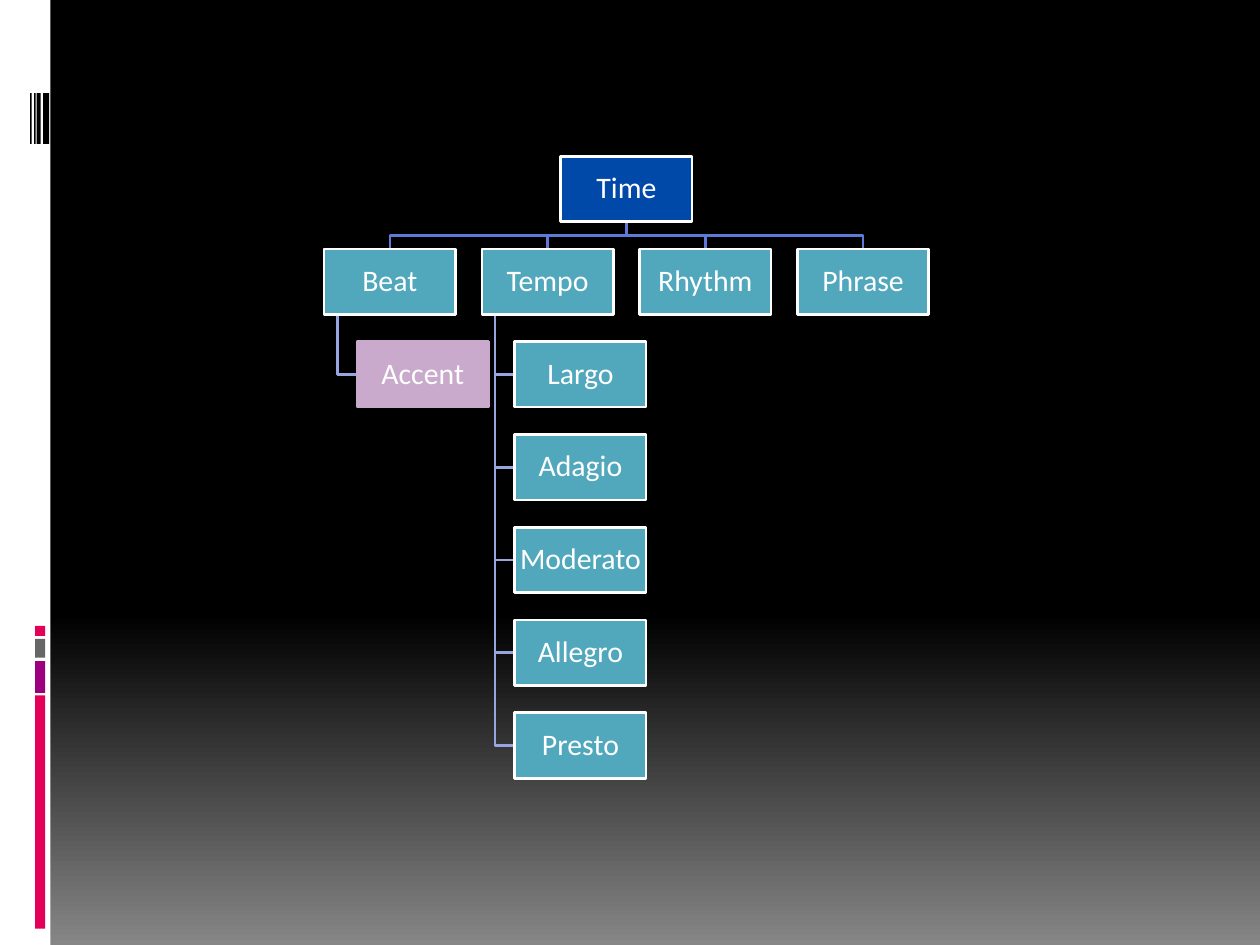
import pptx
import pptx.dml.color
import pptx.enum.shapes
import pptx.enum.text
import pptx.util

Cm = pptx.util.Cm
Pt = pptx.util.Pt

COLORS = {
    "black": "000000",
    "white": "FFFFFF",
    "fade": "868686",
    "pink": "E40059",
    "purple": "9C007F",
    "gray": "666666",
    "root": "0049A9",
    "topic": "51A8BD",
    "accent": "C9AACC",
    "main_link": "5E7AD8",
    "sub_link": "97A5E1",
}

# Tree grid, in centimetres
BOX_W, BOX_H = 2.65, 1.32
COLUMN_STEP, ROW_STEP = 3.18, 1.87
TREE_CENTER, TREE_TOP = 12.63, 3.15
INDENT = BOX_W / 4
TRUNK = BOX_W / 10

TOPICS = {
    "Beat": ["Accent"],
    "Tempo": ["Largo", "Adagio", "Moderato", "Allegro", "Presto"],
    "Rhythm": [],
    "Phrase": [],
}


def rgb(name):
    return pptx.dml.color.RGBColor.from_string(COLORS[name])


class TreeSlide:
    font = "Calibri"
    size = Pt(17)
    line_width = Pt(1.5)

    def __init__(self, slide):
        self.slide = slide

    def background(self, start, end, hold):
        fill = self.slide.background.fill
        fill.gradient()
        fill.gradient_angle = 270
        for stop, color, position in zip(fill.gradient_stops, (start, end), (hold, 1)):
            stop.color.rgb = rgb(color)
            stop.position = position

    def block(self, left, top, width, height, fill, outline=None):
        block = self.slide.shapes.add_shape(
            pptx.enum.shapes.MSO_SHAPE.RECTANGLE,
            Cm(left), Cm(top), Cm(width), Cm(height))
        block.shadow.inherit = False
        block.fill.solid()
        block.fill.fore_color.rgb = rgb(fill)
        if outline:
            block.line.color.rgb = rgb(outline)
            block.line.width = self.line_width
        else:
            block.line.fill.background()
        return block

    def node(self, label, left, top, fill, outline="white"):
        frame = self.block(left, top, BOX_W, BOX_H, fill, outline).text_frame
        frame.text = label
        frame.word_wrap = True
        frame.vertical_anchor = pptx.enum.text.MSO_ANCHOR.MIDDLE
        frame.margin_left = frame.margin_right = Cm(0.03)
        frame.margin_top = frame.margin_bottom = Cm(0.03)
        paragraph = frame.paragraphs[0]
        paragraph.alignment = pptx.enum.text.PP_ALIGN.CENTER
        paragraph.line_spacing = 0.9
        font = paragraph.runs[0].font
        font.name, font.size = self.font, self.size
        font.color.rgb = rgb("white")

    def link(self, points, color):
        start, *rest = [(Cm(x), Cm(y)) for x, y in points]
        builder = self.slide.shapes.build_freeform(*start)
        builder.add_line_segments(rest, close=False)
        link = builder.convert_to_shape()
        link.shadow.inherit = False
        link.fill.background()
        link.line.color.rgb = rgb(color)
        link.line.width = self.line_width


def row_top(row):
    return TREE_TOP + row * ROW_STEP


def column_center(column):
    return TREE_CENTER + (column - (len(TOPICS) - 1) / 2) * COLUMN_STEP


def main():
    deck = pptx.Presentation()
    deck.slide_width, deck.slide_height = Cm(25.4), Cm(19.05)
    page = TreeSlide(deck.slides.add_slide(deck.slide_layouts[6]))
    page.background("black", "fade", 0.65)

    # Side strip with barcode and coloured bars
    page.block(0, 0, 1.02, 19.05, "white")
    for left, width in ((0.87, 0.12), (0.74, 0.08), (0.69, 0.03), (0.61, 0.03)):
        page.block(left, 1.88, width, 1.02, "black")
    for top, height, color in ((14.02, 4.7, "pink"), (13.33, 0.64, "purple"),
                               (12.88, 0.38, "gray"), (12.62, 0.2, "pink")):
        page.block(0.71, top, 0.2, height, color)

    # Links, drawn beneath the boxes
    root_bottom = TREE_TOP + BOX_H
    topic_top = row_top(1)
    fork = (root_bottom + topic_top) / 2
    for column, details in enumerate(TOPICS.values()):
        center = column_center(column)
        left = center - BOX_W / 2
        for row in range(len(details)):
            middle = row_top(row + 2) + BOX_H / 2
            page.link([(left + TRUNK, topic_top + BOX_H), (left + TRUNK, middle),
                       (left + INDENT, middle)], "sub_link")
        page.link([(TREE_CENTER, root_bottom), (TREE_CENTER, fork),
                   (center, fork), (center, topic_top)], "main_link")

    # Boxes
    page.node("Time", TREE_CENTER - BOX_W / 2, TREE_TOP, "root")
    for column, (topic, details) in enumerate(TOPICS.items()):
        left = column_center(column) - BOX_W / 2
        page.node(topic, left, topic_top, "topic")
        for row, detail in enumerate(details, start=2):
            style = ("accent", "accent") if detail == "Accent" else ("topic", "white")
            page.node(detail, left + INDENT, row_top(row), *style)

    deck.save("out.pptx")


if __name__ == "__main__":
    main()
